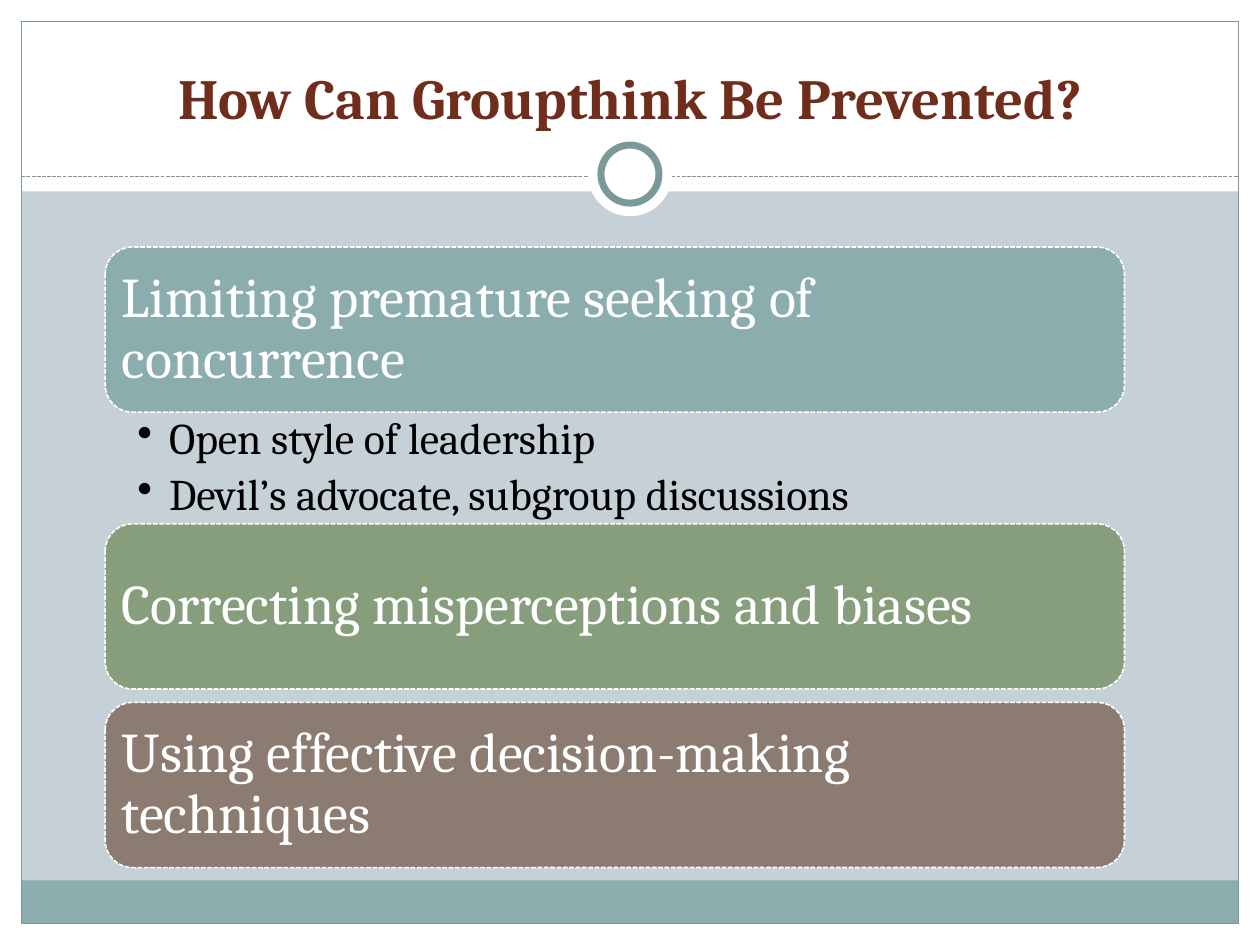
from lxml import etree
from pptx import Presentation
from pptx.dml.color import RGBColor
from pptx.enum.dml import MSO_LINE
from pptx.enum.shapes import MSO_CONNECTOR, MSO_SHAPE
from pptx.enum.text import MSO_ANCHOR, MSO_AUTO_SIZE, PP_ALIGN
from pptx.oxml.ns import qn
from pptx.util import Cm, Pt

RECT, OVAL, ROUND = MSO_SHAPE.RECTANGLE, MSO_SHAPE.OVAL, MSO_SHAPE.ROUNDED_RECTANGLE
DASH = MSO_LINE.SQUARE_DOT
LEFT, CENTER = PP_ALIGN.LEFT, PP_ALIGN.CENTER
TOP, MIDDLE, BOTTOM = MSO_ANCHOR.TOP, MSO_ANCHOR.MIDDLE, MSO_ANCHOR.BOTTOM

WIDE, HIGH = 25.4, 19.05
EDGE = 0.43
WHITE, TEAL, RULE = "FFFFFF", "8CADAE", "7C999A"


def color(code):
    return RGBColor.from_string(code)


def write(frame, text, font="Cambria", size=32, ink=WHITE, bold=False,
          align=LEFT, anchor=MIDDLE, pad=(0.25, 0.13, 0.25, 0.13),
          space=1.0, after=0, bullet=False):
    """Fill a text frame, one paragraph for each line of text."""
    frame.word_wrap = True
    frame.auto_size = MSO_AUTO_SIZE.NONE
    frame.vertical_anchor = anchor
    (frame.margin_left, frame.margin_top,
     frame.margin_right, frame.margin_bottom) = map(Cm, pad)
    frame.text = text
    for par in frame.paragraphs:
        par.alignment = align
        par.line_spacing = space
        par.space_after = Pt(after)
        face = par.runs[0].font
        face.name, face.size, face.bold = font, Pt(size), bold
        face.color.rgb = color(ink)
        if bullet:
            props = par._p.get_or_add_pPr()
            props.set("marL", str(Cm(0.64)))
            props.set("indent", str(-Cm(0.64)))
            etree.SubElement(props, qn("a:buChar")).set("char", "•")


class Board:
    """The current slide and its style."""

    def __init__(self, slide):
        self.slide = slide
        self.shapes = slide.shapes

    def stroke(self, line, ink, width, dash=None):
        line.color.rgb = color(ink)
        line.width = Pt(width)
        if dash:
            line.dash_style = dash

    def shape(self, kind, box, fill=None, ink=None, width=0.75, dash=None):
        item = self.shapes.add_shape(kind, *map(Cm, box))
        item.shadow.inherit = False
        if fill:
            item.fill.solid()
            item.fill.fore_color.rgb = color(fill)
        else:
            item.fill.background()
        if ink:
            self.stroke(item.line, ink, width, dash)
        else:
            item.line.fill.background()
        return item

    def disc(self, x, y, size, **style):
        return self.shape(OVAL, (x - size / 2, y - size / 2, size, size), **style)

    def rule(self, x1, y1, x2, y2):
        item = self.shapes.add_connector(
            MSO_CONNECTOR.STRAIGHT, *map(Cm, (x1, y1, x2, y2)))
        self.stroke(item.line, RULE, 0.75, DASH)
        etree.SubElement(item._element.spPr, qn("a:effectLst"))

    def title(self, text, box):
        item = self.shapes.title
        item.left, item.top, item.width, item.height = map(Cm, box)
        write(item.text_frame, text, size=32.4, ink="712D1C", bold=True,
              align=CENTER, anchor=BOTTOM)
        # Bring the title in front of the frame
        item._element.getparent().append(item._element)

    def card(self, text, box, fill):
        item = self.shape(ROUND, box, fill, WHITE, 0.9, DASH)
        write(item.text_frame, text, pad=[0.17] * 4, space=0.9)

    def points(self, lines, box):
        item = self.shapes.add_textbox(*map(Cm, box))
        write(item.text_frame, "\n".join(lines), size=25, ink="000000",
              anchor=TOP, pad=(0.65, 0.1, 0.64, 0.1), space=0.9, after=5,
              bullet=True)


def main():
    deck = Presentation()
    deck.slide_width, deck.slide_height = Cm(WIDE), Cm(HIGH)
    slide = deck.slides.add_slide(deck.slide_layouts[5])
    slide.background.fill.solid()
    slide.background.fill.fore_color.rgb = color("C5D1D7")
    board = Board(slide)

    # White margins and head band
    for box in ((0, HIGH - EDGE, WIDE, EDGE), (0, 0, WIDE, 3.86),
                (0, 0, EDGE, HIGH), (WIDE - EDGE, 0, EDGE, HIGH)):
        board.shape(RECT, box, WHITE)

    # Foot band, frame and dashed rule
    inner = WIDE - 2 * EDGE
    board.shape(RECT, (EDGE, 17.75, inner, 0.87), TEAL)
    board.shape(RECT, (EDGE, EDGE, inner, HIGH - 2 * EDGE), ink=RULE)
    board.rule(EDGE, 3.56, WIDE - EDGE, 3.56)

    # Ring on the rule
    board.disc(WIDE / 2, 3.51, 1.7, fill=WHITE)
    board.disc(WIDE / 2, 3.51, 1.17, fill=WHITE, ink=RULE, width=4)

    board.title("How Can Groupthink Be Prevented?", (0.85, 0.64, 23.7, 2.12))

    # Stack of cards, with points or a gap below each
    left, top, width, tall = 2.12, 4.98, 20.55, 3.33
    gap, room = 0.27, 2.25
    stack = (
        ("Limiting premature seeking of concurrence", TEAL,
         ("Open style of leadership", "Devil’s advocate, subgroup discussions")),
        ("Correcting misperceptions and biases", "879E7D", ()),
        ("Using effective decision-making techniques", "8C7B70", ()),
    )
    for text, fill, lines in stack:
        board.card(text, (left, top, width, tall), fill)
        top += tall
        if lines:
            board.points(lines, (left, top, width, room))
        top += room if lines else gap

    deck.save("out.pptx")


if __name__ == "__main__":
    main()
